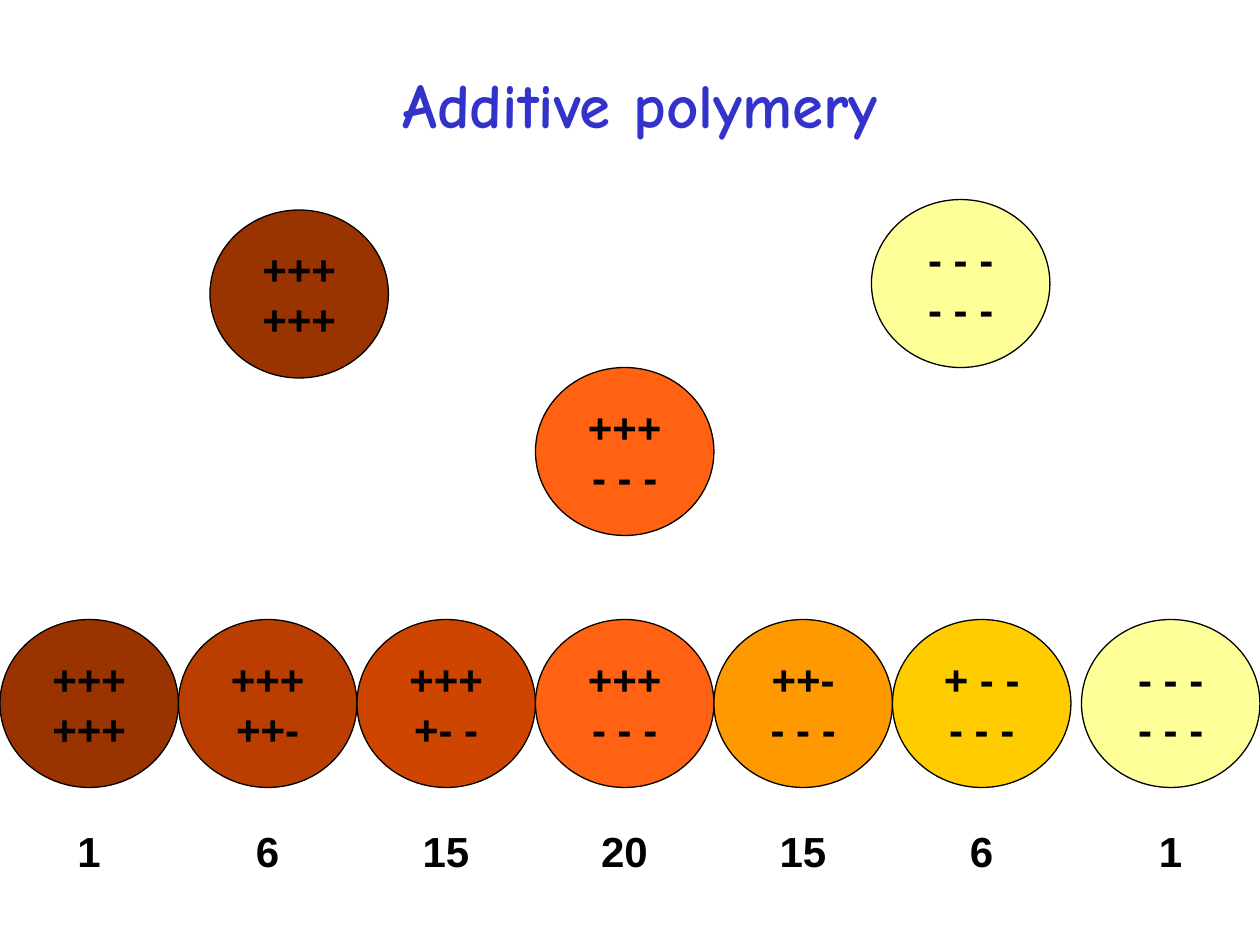
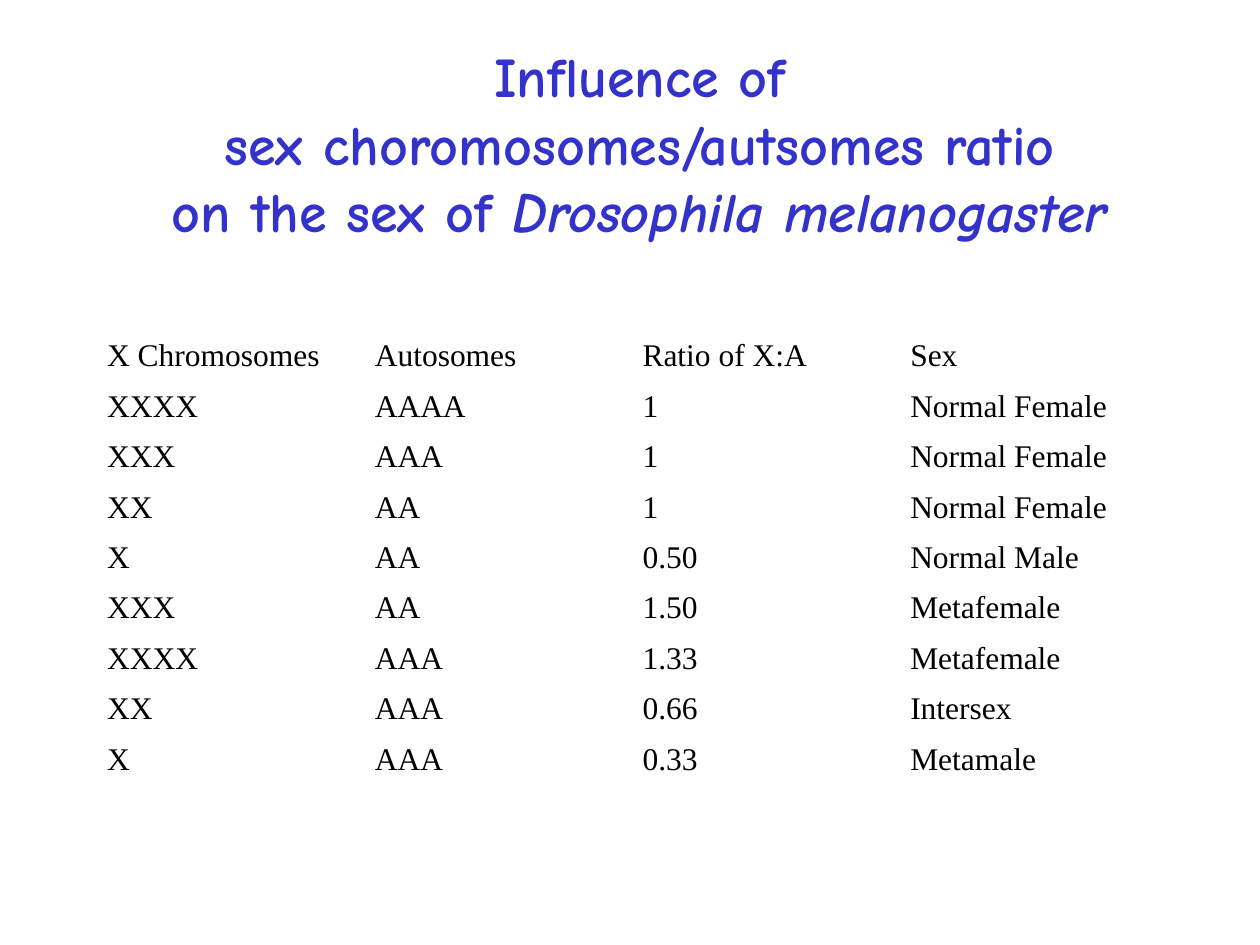
"""Build two genetics slides: additive polymery and Drosophila sex ratios."""
from typing import Any, NamedTuple

from lxml import etree
from pptx import Presentation
from pptx import util as u
from pptx.dml.color import RGBColor
from pptx.enum import shapes, text
from pptx.oxml import ns

BLUE = RGBColor(0x33, 0x33, 0xCC)
BLACK = RGBColor(0x00, 0x00, 0x00)
BROWN = RGBColor(0x99, 0x33, 0x00)
RUST = RGBColor(0xBA, 0x3E, 0x00)
BRICK = RGBColor(0xCE, 0x45, 0x00)
ORANGE = RGBColor(0xFF, 0x62, 0x13)
AMBER = RGBColor(0xFF, 0x99, 0x00)
GOLD = RGBColor(0xFF, 0xCC, 0x00)
CREAM = RGBColor(0xFF, 0xFF, 0x99)

COLUMNS, ROWS = 120, 90
WIDTH, HEIGHT = u.Inches(10), u.Inches(7.5)
CIRCLE_W, CIRCLE_H = 17, 16
OFFSPRING_TOP = 59
INSET = u.Inches(0.1)
NO_STYLE = "{2D5ABB26-0587-4C30-8999-92F81FD0307C}"

TITLE_FONT = dict(name="Comic Neue", bold=True)
LABEL_FONT = dict(name="Arial", size=u.Pt(24), bold=True)
TABLE_FONT = dict(name="Times New Roman", size=u.Pt(18))


class Box(NamedTuple):
    """Place and size in grid columns and rows."""
    left: float
    top: float
    width: float
    height: float


class Phenotype(NamedTuple):
    """Colour and the two allele lines of a circle."""
    fill: RGBColor
    upper: str
    lower: str


class Offspring(NamedTuple):
    """A phenotype, its left column and its share of the offspring."""
    phenotype: Phenotype
    left: int
    count: int


DARK = Phenotype(BROWN, "+++", "+++")
MIDDLE = Phenotype(ORANGE, "+++", "- - -")
LIGHT = Phenotype(CREAM, "- - -", "- - -")

CROSS = [(DARK, 20, 20), (LIGHT, 83, 19), (MIDDLE, 51, 35)]
SERIES = [
    (DARK, 1),
    (Phenotype(RUST, "+++", "++-"), 6),
    (Phenotype(BRICK, "+++", "+- -"), 15),
    (MIDDLE, 20),
    (Phenotype(AMBER, "++-", "- - -"), 15),
    (Phenotype(GOLD, "+ - -", "- - -"), 6),
    (LIGHT, 1),
]
OFFSPRING = [
    Offspring(kind, min(i * CIRCLE_W + i // 6, COLUMNS - CIRCLE_W), count)
    for i, (kind, count) in enumerate(SERIES)
]

SEX_RATIOS = [
    ("X Chromosomes", "Autosomes", "Ratio of X:A", "Sex"),
    ("XXXX", "AAAA", "1", "Normal Female"),
    ("XXX", "AAA", "1", "Normal Female"),
    ("XX", "AA", "1", "Normal Female"),
    ("X", "AA", "0.50", "Normal Male"),
    ("XXX", "AA", "1.50", "Metafemale"),
    ("XXXX", "AAA", "1.33", "Metafemale"),
    ("XX", "AAA", "0.66", "Intersex"),
    ("X", "AAA", "0.33", "Metamale"),
]


def col(n: float) -> int:
    """Return the length of n grid columns."""
    return u.Emu(round(WIDTH * n / COLUMNS))


def row(n: float) -> int:
    """Return the length of n grid rows."""
    return u.Emu(round(HEIGHT * n / ROWS))


def place(box: Box) -> tuple[int, int, int, int]:
    """Turn a grid box into slide lengths."""
    return col(box.left), row(box.top), col(box.width), row(box.height)


def add_run(p: Any, words: str, font: dict[str, Any], color: RGBColor = BLACK) -> None:
    """Add a formatted run to a paragraph."""
    r = p.add_run()
    r.text = words
    for key, value in font.items():
        setattr(r.font, key, value)
    r.font.color.rgb = color


def add_title(s: Any, box: Box, lines: list[str], size: int, species: str = "") -> None:
    """Add a centred title that may end in an italic species name."""
    tf = s.shapes.add_textbox(*place(box)).text_frame
    tf.word_wrap = True
    tf.vertical_anchor = text.MSO_ANCHOR.MIDDLE
    p = tf.paragraphs[0]
    p.alignment = text.PP_ALIGN.CENTER
    font = TITLE_FONT | dict(size=u.Pt(size))
    for i, line in enumerate(lines):
        if i:
            p.add_line_break()
        add_run(p, line, font, BLUE)
    if species:
        add_run(p, species, font | dict(italic=True), BLUE)


def add_circle(s: Any, kind: Phenotype, left: int, top: int) -> None:
    """Draw one phenotype circle with its alleles."""
    box = Box(left, top, CIRCLE_W, CIRCLE_H)
    sp = s.shapes.add_shape(shapes.MSO_SHAPE.OVAL, *place(box))
    sp.shadow.inherit = False
    sp.fill.solid()
    sp.fill.fore_color.rgb = kind.fill
    sp.line.color.rgb = BLACK
    sp.line.width = u.Pt(0.75)
    tf = sp.text_frame
    tf.word_wrap = False
    tf.vertical_anchor = text.MSO_ANCHOR.MIDDLE
    for p, alleles in zip((tf.paragraphs[0], tf.add_paragraph()), (kind.upper, kind.lower)):
        p.alignment = text.PP_ALIGN.CENTER
        add_run(p, alleles, LABEL_FONT)


def add_counts(s: Any, box: Box) -> None:
    """Write the offspring counts on tab stops centred below the circles."""
    tf = s.shapes.add_textbox(*place(box)).text_frame
    tf.word_wrap = True
    p = tf.paragraphs[0]
    tabs = etree.SubElement(p._p.get_or_add_pPr(), ns.qn("a:tabLst"))
    for child in OFFSPRING:
        stop = col(child.left + CIRCLE_W / 2 - box.left) - INSET
        etree.SubElement(tabs, ns.qn("a:tab"), pos=str(stop), algn="ctr")
    add_run(p, "".join(f"\t{child.count}" for child in OFFSPRING), LABEL_FONT)


def add_plain_table(s: Any, box: Box, records: list[tuple[str, ...]]) -> None:
    """Add a table without fills or borders."""
    frame = s.shapes.add_table(len(records), len(records[0]), *place(box))
    table = frame.table
    table.first_row = table.horz_banding = False
    table._tbl.tblPr.find(ns.qn("a:tableStyleId")).text = NO_STYLE
    for i, record in enumerate(records):
        for j, words in enumerate(record):
            cell = table.cell(i, j)
            cell.fill.background()
            cell.vertical_anchor = text.MSO_ANCHOR.MIDDLE
            add_run(cell.text_frame.paragraphs[0], words, TABLE_FONT)


def main() -> None:
    """Build and save both slides."""
    prs = Presentation()
    prs.slide_width, prs.slide_height = WIDTH, HEIGHT
    blank = prs.slide_layouts[6]

    s = prs.slides.add_slide(blank)
    add_title(s, Box(11.8, 5.3, 98.3, 9), ["Additive polymery"], 36)
    for kind, left, top in CROSS:
        add_circle(s, kind, left, top)
    for child in OFFSPRING:
        add_circle(s, child.phenotype, child.left, OFFSPRING_TOP)
    add_counts(s, Box(2, 78, 115, 6))

    s = prs.slides.add_slide(blank)
    lines = ["Influence of", "sex choromosomes/autsomes ratio", "on the sex of "]
    add_title(s, Box(5.2, 4.3, 111.5, 18.6), lines, 32, "Drosophila melanogaster")
    add_plain_table(s, Box(9, 31.5, 102, 43.2), SEX_RATIOS)

    prs.save("out.pptx")


if __name__ == "__main__":
    main()
